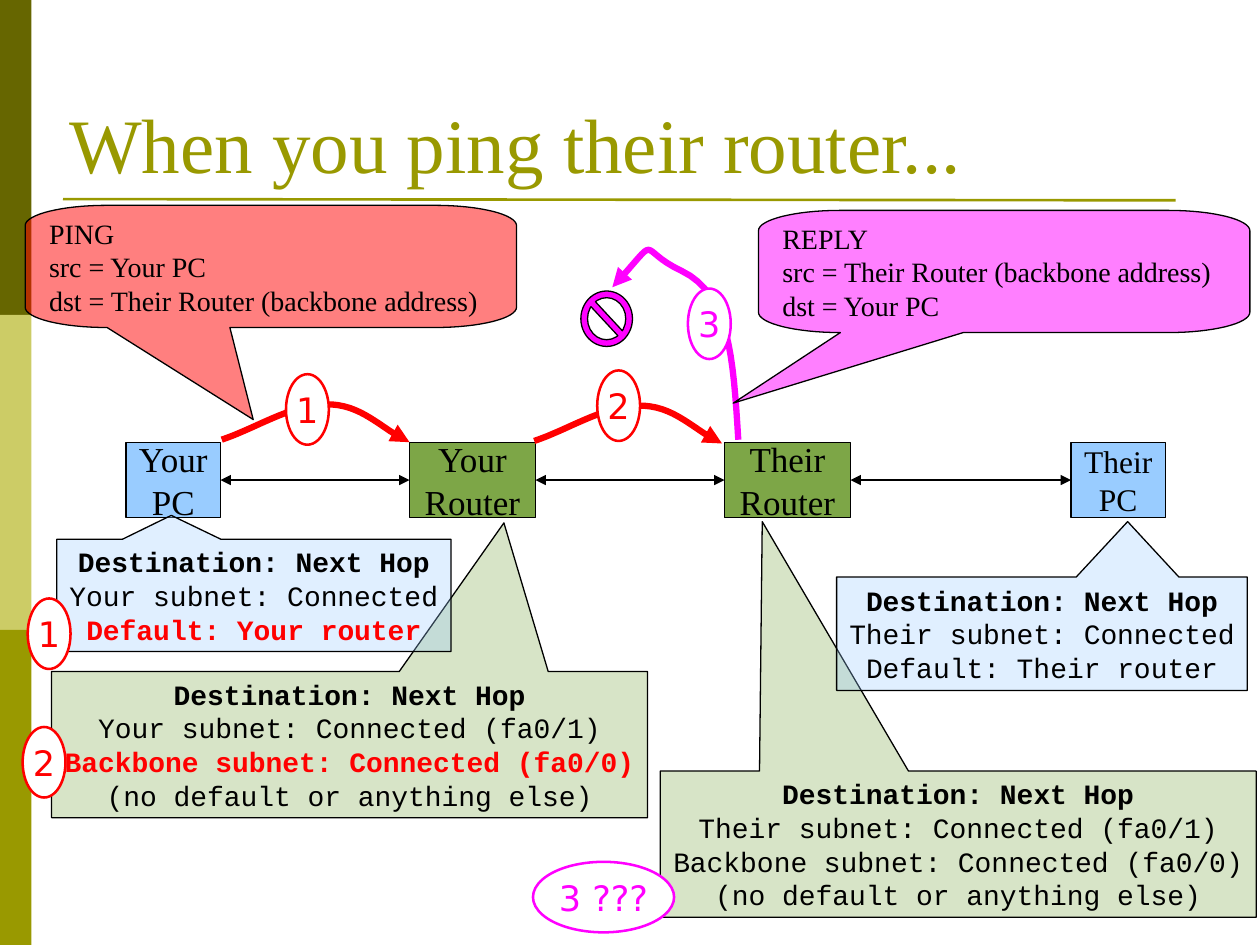
from pptx import Presentation
from pptx.dml.color import RGBColor
from pptx.enum.shapes import MSO_CONNECTOR, MSO_SHAPE
from pptx.enum.text import MSO_ANCHOR, PP_ALIGN
from pptx.oxml.ns import qn
from pptx.util import Inches, Pt
from lxml.etree import SubElement

presentation = Presentation()
presentation.slide_width, presentation.slide_height = Inches(10), Inches(7.5)
COLUMN = presentation.slide_width // 100
ROW = presentation.slide_height // 75
SERIF, MONO, SANS = "Times New Roman", "Courier New", "DejaVu Sans"
BLACK, WHITE, RED, MAGENTA = "000000", "FFFFFF", "FF0000", "FF00FF"
SKY, GREEN, OLIVE = "99CCFF", "7DA647", "999900"


def color(value):
    """Turn a hex string into a colour."""
    return RGBColor.from_string(value)


def place(box):
    """Convert a left, top, width, height box from grid units to slide lengths."""
    left, top, width, height = box
    return [round(left * COLUMN), round(top * ROW), round(width * COLUMN), round(height * ROW)]


def paint(shape, fill=None, line=None, weight=0.75, opacity=100):
    """Set the fill, outline and opacity of a shape without a shadow."""
    shape.shadow.inherit = False
    if fill:
        shape.fill.solid()
        shape.fill.fore_color.rgb = color(fill)
        if opacity < 100:
            tint = shape.fill._xPr.find(qn("a:solidFill"))[0]
            SubElement(tint, qn("a:alpha"), val=str(opacity * 1000))
    else:
        shape.fill.background()
    if line:
        shape.line.color.rgb = color(line)
        shape.line.width = Pt(weight)
    else:
        shape.line.fill.background()


def write(shape, lines, font, size, ink=BLACK, align=PP_ALIGN.CENTER, inset=0.05, wrap=False):
    """Fill a shape with one formatted paragraph for each line."""
    frame = shape.text_frame
    frame.text = "\n".join(lines)
    frame.word_wrap = wrap
    frame.vertical_anchor = MSO_ANCHOR.MIDDLE
    frame.margin_left = frame.margin_right = frame.margin_top = frame.margin_bottom = Inches(inset)
    for paragraph in frame.paragraphs:
        paragraph.alignment = align
        paragraph.font.name, paragraph.font.size = font, Pt(size)
        paragraph.font.color.rgb = color(ink)


def add_arrowheads(line, *ends):
    """Put triangle heads on the named ends of a line."""
    outline = line.line._get_or_add_ln()
    for end in ends:
        SubElement(outline, qn("a:" + end), type="triangle")


def add_line(slide, start, end, ink, weight):
    """Draw a straight connector between two grid points."""
    ends = [round(value * unit) for point in (start, end) for value, unit in zip(point, (COLUMN, ROW))]
    line = slide.shapes.add_connector(MSO_CONNECTOR.STRAIGHT, *ends)
    line.line.color.rgb = color(ink)
    line.line.width = Pt(weight)
    SubElement(line._element.spPr, qn("a:effectLst"))
    return line


def bezier(points, steps=16):
    """Sample a chain of cubic curves given as start, control, control, end, and so on."""
    samples = [points[0]]
    for first in range(0, len(points) - 1, 3):
        for step in range(1, steps + 1):
            t = step / steps
            weights = ((1 - t) ** 3, 3 * t * (1 - t) ** 2, 3 * t * t * (1 - t), t ** 3)
            curve = points[first:first + 4]
            samples.append(tuple(sum(w * p[axis] for w, p in zip(weights, curve)) for axis in (0, 1)))
    return samples


def add_outline(slide, points, close):
    """Build a freeform through grid points."""
    scaled = [(round(x * COLUMN), round(y * ROW)) for x, y in points]
    builder = slide.shapes.build_freeform(*scaled[0], scale=1.0)
    builder.add_line_segments(scaled[1:], close=close)
    return builder.convert_to_shape()


def add_frame(slide, heading):
    """Add the side bands, the rule and the title."""
    for index, shade in enumerate(("666600", "CCCC66", OLIVE)):
        paint(slide.shapes.add_shape(MSO_SHAPE.RECTANGLE, *place((0, 25 * index, 2.5, 25))), shade)
    add_line(slide, (5, 15.8), (93.3, 15.9), OLIVE, 1.5)
    title = slide.shapes.title
    title.left, title.top, title.width, title.height = place((5, 7.5, 90, 8))
    write(title, [heading], SERIF, 44, OLIVE, PP_ALIGN.LEFT, wrap=True)
    title.text_frame.vertical_anchor = MSO_ANCHOR.BOTTOM


def add_node(slide, box, lines, fill, size):
    """Add a computer or router box."""
    node = slide.shapes.add_shape(MSO_SHAPE.RECTANGLE, *place(box))
    paint(node, fill, BLACK)
    write(node, lines, SERIF, size)
    return node


def add_network(slide, top, height):
    """Add the row of nodes joined by two-headed arrows."""
    nodes = [add_node(slide, (left, top, width, height), lines, fill, size) for left, width, lines, fill, size in (
        (10, 7.5, ("Your", "PC"), SKY, 20),
        (32.5, 10, ("Your", "Router"), GREEN, 20),
        (57.5, 10, ("Their", "Router"), GREEN, 20),
        (85, 7.5, ("Their", "PC"), SKY, 18))]
    for near, far in zip(nodes, nodes[1:]):
        link = add_line(slide, (0, 0), (1, 1), BLACK, 0.75)
        link.begin_connect(near, 3)
        link.end_connect(far, 1)
        add_arrowheads(link, "headEnd", "tailEnd")


def add_routes(slide, box, tip, fill, routes, chosen=None):
    """Add a routing table callout pointing at its node."""
    left, top, width, height = box
    table = slide.shapes.add_shape(MSO_SHAPE.RECTANGULAR_CALLOUT, *place(box))
    table.adjustments[0] = (tip[0] - left) / width - 0.5
    table.adjustments[1] = (tip[1] - top) / height - 0.5
    paint(table, fill, BLACK, opacity=30)
    write(table, ("Destination: Next Hop",) + routes, MONO, 16)
    paragraphs = table.text_frame.paragraphs
    paragraphs[0].font.bold = True
    if chosen:
        paragraphs[chosen].font.bold = True
        paragraphs[chosen].font.color.rgb = color(RED)


def add_hop(slide, points, ink):
    """Add a thick curved arrow."""
    hop = add_outline(slide, bezier(points), False)
    paint(hop, None, ink, 3.6)
    add_arrowheads(hop, "tailEnd")


def add_badge(slide, left, top, label, ink, width=3.4):
    """Add an oval step number."""
    badge = slide.shapes.add_shape(MSO_SHAPE.OVAL, *place((left, top, width, 5.6)))
    paint(badge, WHITE, ink, 1.45)
    write(badge, [label], SANS, 20, ink, inset=0.03)


def add_speech(slide, box, tip, fill, lines):
    """Add a speech bubble with elliptical corners and a tail below."""
    left, top, width, height = box
    right, bottom = left + width, top + height
    across, down = width / 6, height / 6
    bend = 0.45

    def corner(x, y, toward_x, toward_y, upright):
        """Sample the rounded corner at x, y, entered along the upright side or the level one."""
        side, level = (x, y + toward_y * down), (x + toward_x * across, y)
        curve = [side, (x, y + toward_y * down * bend), (x + toward_x * across * bend, y), level]
        return bezier(curve if upright else curve[::-1])

    points = (corner(left, top, 1, 1, False) + corner(left, bottom, 1, -1, True)
              + [tip, (left + width * 5 / 12, bottom)]
              + corner(right, bottom, -1, -1, False) + corner(right, top, -1, 1, True))
    paint(add_outline(slide, points, True), fill, BLACK, opacity=50)
    words = slide.shapes.add_textbox(*place((left + 1.4, top + 0.6, width - 3, height - 1.2)))
    write(words, lines, SERIF, 16, align=PP_ALIGN.LEFT)


def build():
    """Build the ping slide and save it."""
    slide = presentation.slides.add_slide(presentation.slide_layouts[5])
    add_frame(slide, "When you ping their router...")
    add_network(slide, 35.1, 6)
    backbone = "Backbone subnet: Connected (fa0/0)"
    dead_end = "(no default or anything else)"
    add_routes(slide, (4.1, 53.3, 47.3, 11.6), (40, 41.5), GREEN,
               ("Your subnet: Connected (fa0/1)", backbone, dead_end), 2)
    add_routes(slide, (4.5, 42.8, 31.3, 8.9), (13.6, 40.9), SKY,
               ("Your subnet: Connected", "Default: Your router"), 2)
    add_routes(slide, (52.4, 61.2, 47.3, 11.6), (60.5, 41.4), GREEN,
               ("Their subnet: Connected (fa0/1)", backbone, dead_end))
    add_routes(slide, (66.4, 45.8, 32.6, 9), (89.5, 41.4), SKY,
               ("Their subnet: Connected", "Default: Their router"))
    arc = ((0, 0), (2.7, -0.9), (5.3, -2.7), (8.2, -2.8), (11.1, -2.9), (12.7, -0.8), (14.9, 0.2))
    for left, top in ((17.6, 34.9), (42.4, 35)):
        add_hop(slide, [(left + x, top + y) for x, y in arc], RED)
    add_hop(slide, [(58.6, 34.9), (58.2, 28.4), (57.9, 23.3), (54.1, 21.5),
                    (50.3, 19.7), (52.7, 18.4), (48.6, 22.8)], MAGENTA)
    for left, top, label in ((22.7, 29.7, "1"), (47.4, 29.4, "2"), (2.2, 47.5, "1"), (1.8, 57.7, "2")):
        add_badge(slide, left, top, label, RED)
    add_badge(slide, 54.6, 22.9, "3", MAGENTA)
    add_badge(slide, 42.3, 68.4, "3 ???", MAGENTA, 11.2)
    blocked = slide.shapes.add_shape(MSO_SHAPE.NO_SYMBOL, *place((46.1, 23.1, 4.1, 4.4)))
    blocked.adjustments[0] = 0.13
    paint(blocked, MAGENTA, BLACK)
    add_speech(slide, (2, 16.3, 39, 9.7), (20.1, 33.3), RED,
               ("PING", "src = Your PC", "dst = Their Router (backbone address)"))
    add_speech(slide, (60.2, 16.7, 39, 9.7), (58.2, 32), MAGENTA,
               ("REPLY", "src = Their Router (backbone address)", "dst = Your PC"))
    presentation.save("out.pptx")


if __name__ == "__main__":
    build()
